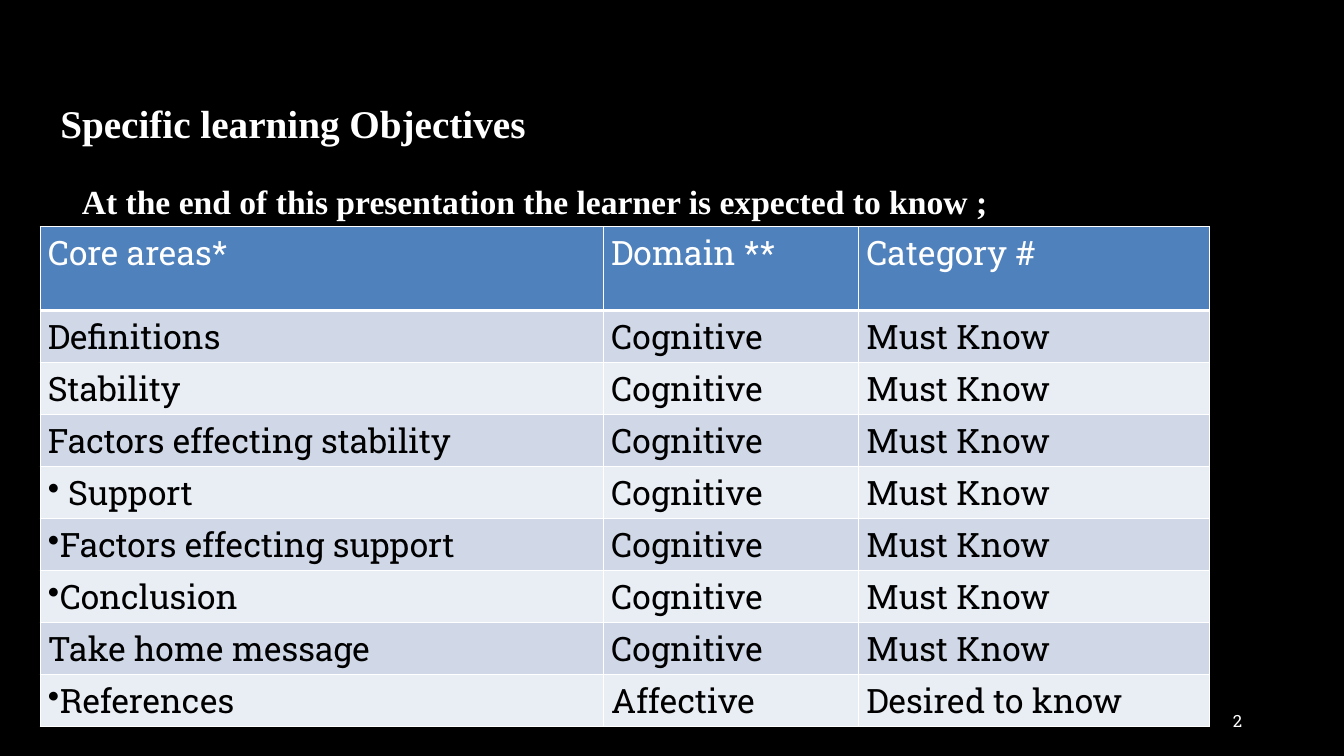
"""Build the learning objectives slide with its table of core areas."""
from typing import NamedTuple

import lxml.etree
import pptx
import pptx.dml.color
import pptx.enum.text
import pptx.oxml.ns
import pptx.util

PX = 5715
WHITE, BLACK = "FFFFFF", "000000"
HEADER_FILL, BAND_FILLS = "4F81BD", ("D0D8E8", "E9EDF4")
SERIF, SLAB = "Times New Roman", "Roboto Slab"
COLUMN_WIDTHS = (894, 405, 557)
HEADER_HEIGHT, ROW_HEIGHT = 133, 77
TABLE_LEFT, TABLE_TOP = 64, 360
MARGIN_X, MARGIN_Y = 12, 6
LEFT, RIGHT = pptx.enum.text.PP_ALIGN.LEFT, pptx.enum.text.PP_ALIGN.RIGHT
TOP, MIDDLE = pptx.enum.text.MSO_ANCHOR.TOP, pptx.enum.text.MSO_ANCHOR.MIDDLE


class Label(NamedTuple):
    text: str
    left: int
    top: int
    width: int
    height: int
    font: str
    size: int
    bold: bool = False
    anchor: pptx.enum.text.MSO_ANCHOR = TOP
    alignment: pptx.enum.text.PP_ALIGN = LEFT
    line_spacing: float = 1.0


class Objective(NamedTuple):
    area: str
    domain: str = "Cognitive"
    category: str = "Must Know"
    bullet: bool = False


LABELS = (
    Label("Specific learning Objectives", 80, 133, 1598, 133, SERIF, 28, True,
          MIDDLE, line_spacing=0.9),
    Label("2", 1507, 1112, 480, 64, SLAB, 12, anchor=MIDDLE, alignment=RIGHT),
    Label("At the end of this presentation the learner is expected to know ;",
          114, 280, 1594, 80, SERIF, 24, True),
)
HEADER = Objective("Core areas*", "Domain **", "Category #")
OBJECTIVES = (
    Objective("Definitions"),
    Objective("Stability"),
    Objective("Factors effecting stability"),
    Objective(" Support", bullet=True),
    Objective("Factors effecting support", bullet=True),
    Objective("Conclusion", bullet=True),
    Objective("Take home message"),
    Objective("References", "Affective", "Desired to know", True),
)


def px(length: int) -> pptx.util.Emu:
    return pptx.util.Emu(length * PX)


def color(value: str) -> pptx.dml.color.RGBColor:
    return pptx.dml.color.RGBColor.from_string(value)


def style(paragraph, name: str, size: int, fill: str, bold: bool = False) -> None:
    font = paragraph.font
    font.name, font.size, font.bold = name, pptx.util.Pt(size), bold
    font.color.rgb = color(fill)


def add_label(slide, label: Label) -> None:
    shape = slide.shapes.add_textbox(
        px(label.left), px(label.top), px(label.width), px(label.height))
    frame = shape.text_frame
    frame.word_wrap = True
    frame.vertical_anchor = label.anchor
    paragraph = frame.paragraphs[0]
    paragraph.text = label.text
    paragraph.alignment = label.alignment
    paragraph.line_spacing = label.line_spacing
    style(paragraph, label.font, label.size, WHITE, label.bold)


def add_borders(cell, bottom_points: int) -> None:
    properties = cell._tc.get_or_add_tcPr()
    widths = {"lnL": 1, "lnR": 1, "lnT": 1, "lnB": bottom_points}
    for index, (side, points) in enumerate(widths.items()):
        line = lxml.etree.Element(
            pptx.oxml.ns.qn(f"a:{side}"), w=str(pptx.util.Pt(points)))
        fill = lxml.etree.SubElement(line, pptx.oxml.ns.qn("a:solidFill"))
        lxml.etree.SubElement(fill, pptx.oxml.ns.qn("a:srgbClr"), val=WHITE)
        properties.insert(index, line)


def add_bullet(paragraph) -> None:
    properties = paragraph._p.get_or_add_pPr()
    bullet = lxml.etree.Element(pptx.oxml.ns.qn("a:buChar"), char="•")
    properties.insert(0, bullet)


def fill_row(cells, objective: Objective, fill: str, text_color: str,
             bottom_points: int = 1) -> None:
    texts = (objective.area, objective.domain, objective.category)
    for cell, text in zip(cells, texts):
        cell.margin_left = cell.margin_right = px(MARGIN_X)
        cell.margin_top = cell.margin_bottom = px(MARGIN_Y)
        cell.fill.solid()
        cell.fill.fore_color.rgb = color(fill)
        add_borders(cell, bottom_points)
        paragraph = cell.text_frame.paragraphs[0]
        paragraph.text = text
        style(paragraph, SLAB, 24, text_color)
    if objective.bullet:
        add_bullet(cells[0].text_frame.paragraphs[0])


def add_objectives(slide) -> None:
    height = HEADER_HEIGHT + ROW_HEIGHT * len(OBJECTIVES)
    table = slide.shapes.add_table(
        len(OBJECTIVES) + 1, len(COLUMN_WIDTHS), px(TABLE_LEFT), px(TABLE_TOP),
        px(sum(COLUMN_WIDTHS)), px(height)).table
    table.first_row = table.horz_banding = False
    for column, width in zip(table.columns, COLUMN_WIDTHS):
        column.width = px(width)
    header, *rows = table.rows
    header.height = px(HEADER_HEIGHT)
    fill_row(header.cells, HEADER, HEADER_FILL, WHITE, 3)
    for index, (row, objective) in enumerate(zip(rows, OBJECTIVES)):
        row.height = px(ROW_HEIGHT)
        fill_row(row.cells, objective, BAND_FILLS[index % 2], BLACK)


def main() -> None:
    presentation = pptx.Presentation()
    presentation.slide_width, presentation.slide_height = px(2133), px(1200)
    slide = presentation.slides.add_slide(presentation.slide_layouts[6])
    slide.background.fill.solid()
    slide.background.fill.fore_color.rgb = color(BLACK)
    add_objectives(slide)
    for label in LABELS:
        add_label(slide, label)
    presentation.save("out.pptx")


if __name__ == "__main__":
    main()
